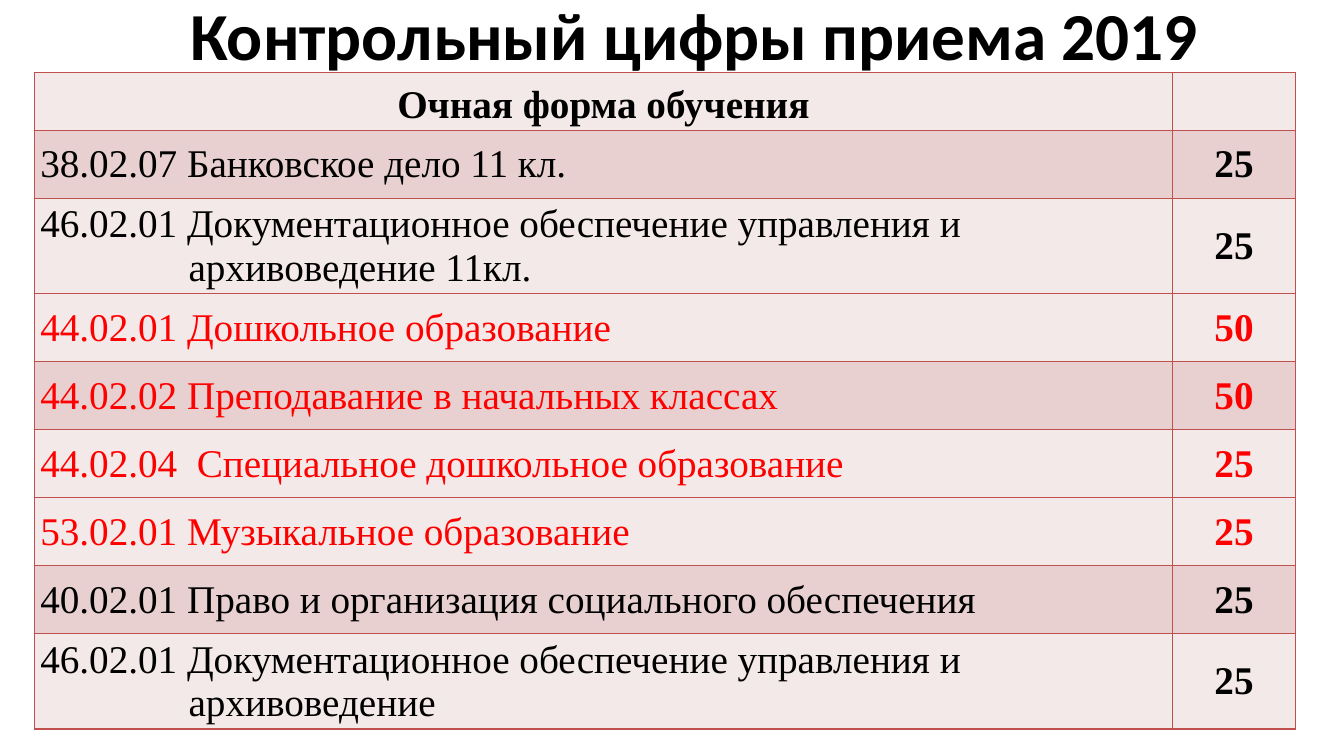
from lxml.etree import SubElement
from pptx import Presentation
from pptx.dml.color import RGBColor
from pptx.enum.text import MSO_ANCHOR as Anchor, PP_ALIGN as Align
from pptx.oxml.ns import qn
from pptx.util import Pt

BLACK = RGBColor(0x00, 0x00, 0x00)
RED = RGBColor(0xFF, 0x00, 0x00)
BORDER = RGBColor(0xC0, 0x50, 0x4D)
LIGHT = RGBColor(0xF4, 0xE9, 0xE9)
DARK = RGBColor(0xE8, 0xD0, 0xD0)

HEADER = "Очная форма обучения"
HEADER_HEIGHT, ROW_HEIGHT, TALL_HEIGHT = 41.5, 48.6, 68
COLUMN_WIDTHS = (813, 88)
CODE_INDENT = 106

PROGRAMS = [
    ("38.02.07 Банковское дело 11 кл.", 25, BLACK, False),
    ("46.02.01 Документационное обеспечение управления и архивоведение 11кл.", 25, BLACK, True),
    ("44.02.01 Дошкольное образование", 50, RED, False),
    ("44.02.02 Преподавание в начальных классах", 50, RED, False),
    ("44.02.04  Специальное дошкольное образование", 25, RED, False),
    ("53.02.01 Музыкальное образование", 25, RED, False),
    ("40.02.01 Право и организация социального обеспечения", 25, BLACK, False),
    ("46.02.01 Документационное обеспечение управления и архивоведение", 25, BLACK, True),
]


def write(para, text, name, size, color, bold, align):
    para.text = text
    para.alignment = align
    font = para.font
    font.name, font.size, font.bold = name, Pt(size), bold
    font.color.rgb = color


def add_title(page, text):
    box = page.shapes.add_textbox(Pt(112), Pt(-8), Pt(768), Pt(66))
    box.text_frame.word_wrap = True
    write(box.text_frame.paragraphs[0], text, "Calibri", 48, BLACK, True, Align.CENTER)


def style_cell(cell, fill):
    cell.margin_left = cell.margin_right = Pt(4.3)
    cell.margin_top = cell.margin_bottom = 0
    cell.vertical_anchor = Anchor.MIDDLE
    properties = cell._tc.get_or_add_tcPr()
    for side in ("lnL", "lnR", "lnT", "lnB"):
        line = SubElement(properties, qn(f"a:{side}"), w=str(Pt(1)))
        solid = SubElement(line, qn("a:solidFill"))
        SubElement(solid, qn("a:srgbClr"), val=str(BORDER))
    cell.fill.solid()
    cell.fill.fore_color.rgb = fill


def fill_cell(cell, text, color, bold, align):
    para = cell.text_frame.paragraphs[0]
    write(para, text, "Times New Roman", 28, color, bold, align)
    return para


def hang_after_code(para):
    properties = para._p.get_or_add_pPr()
    properties.set("marL", str(Pt(CODE_INDENT)))
    properties.set("indent", str(-Pt(CODE_INDENT)))


def add_admissions(page):
    heights = [HEADER_HEIGHT]
    heights += [TALL_HEIGHT if tall else ROW_HEIGHT for *_, tall in PROGRAMS]
    frame = page.shapes.add_table(len(heights), len(COLUMN_WIDTHS), Pt(24.5), Pt(51.8),
                                  Pt(sum(COLUMN_WIDTHS)), Pt(sum(heights)))
    table = frame.table
    for column, width in zip(table.columns, COLUMN_WIDTHS):
        column.width = Pt(width)
    for index, (row, height) in enumerate(zip(table.rows, heights)):
        row.height = Pt(height)
        for cell in row.cells:
            style_cell(cell, DARK if index % 3 == 1 else LIGHT)

    header = fill_cell(table.cell(0, 0), HEADER, BLACK, True, Align.CENTER)
    header.line_spacing = 1.15
    for index, (program, places, color, tall) in enumerate(PROGRAMS, 1):
        para = fill_cell(table.cell(index, 0), program, color, False, Align.LEFT)
        if tall:
            hang_after_code(para)
        fill_cell(table.cell(index, 1), str(places), color, True, Align.CENTER)


def main():
    deck = Presentation()
    deck.slide_width, deck.slide_height = Pt(960), Pt(540)
    page = deck.slides.add_slide(deck.slide_layouts[6])
    add_title(page, "Контрольный цифры приема 2019")
    add_admissions(page)
    deck.save("out.pptx")


if __name__ == "__main__":
    main()
